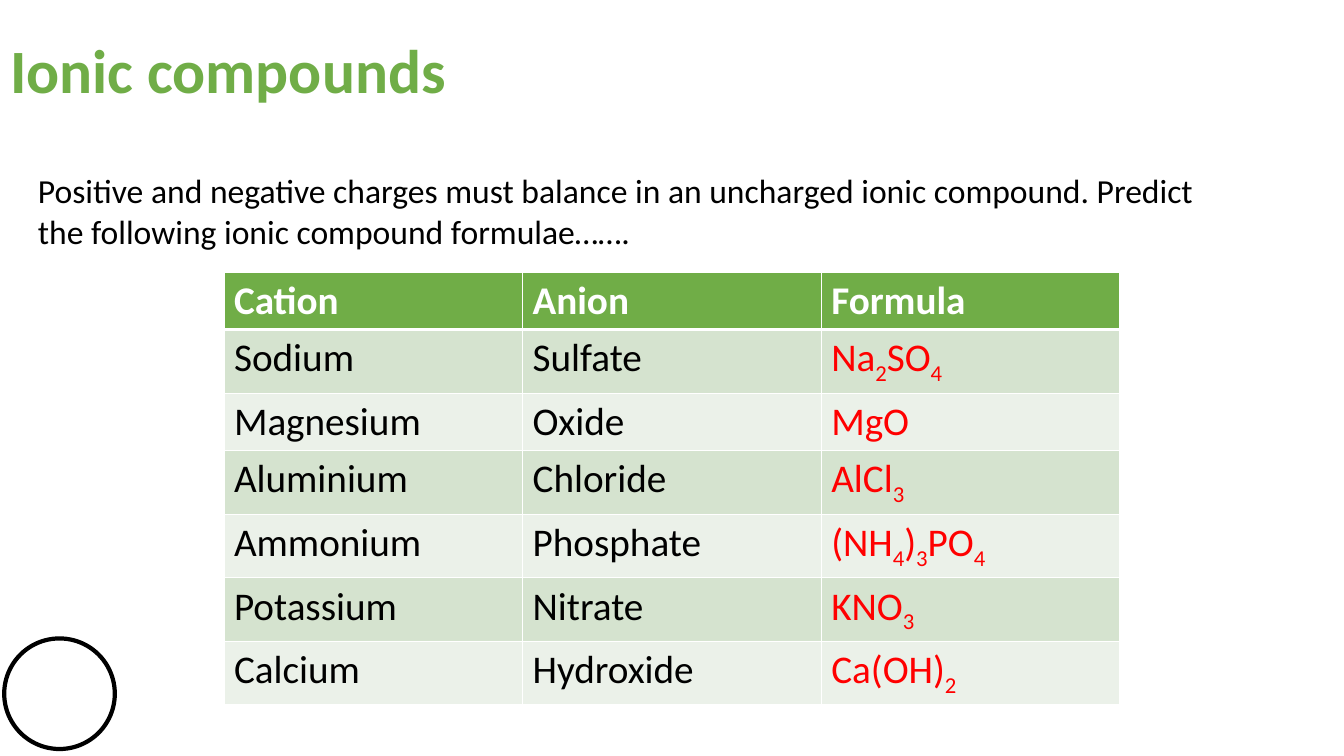
import itertools

import pptx
import pptx.dml.color
import pptx.enum.shapes
import pptx.enum.text
import pptx.oxml
import pptx.oxml.ns
import pptx.util

Pt = pptx.util.Pt
RGBColor = pptx.dml.color.RGBColor

GREEN = RGBColor(0x70, 0xAD, 0x47)
BAND_DARK = RGBColor(0xD5, 0xE3, 0xCF)
BAND_LIGHT = RGBColor(0xEB, 0xF1, 0xE9)
WHITE = RGBColor(0xFF, 0xFF, 0xFF)
BLACK = RGBColor(0x00, 0x00, 0x00)
RED = RGBColor(0xFF, 0x00, 0x00)

FONT = "Calibri"
HEADINGS = ("Cation", "Anion", "Formula")
COMPOUNDS = (
    ("Sodium", "Sulfate", "Na2SO4"),
    ("Magnesium", "Oxide", "MgO"),
    ("Aluminium", "Chloride", "AlCl3"),
    ("Ammonium", "Phosphate", "(NH4)3PO4"),
    ("Potassium", "Nitrate", "KNO3"),
    ("Calcium", "Hydroxide", "Ca(OH)2"),
)


def add_run(p, text, size, color, bold=False):
    r = p.add_run()
    r.text = text
    r.font.name = FONT
    r.font.size = Pt(size)
    r.font.bold = bold
    r.font.color.rgb = color
    return r


def add_formula(p, formula, size, color):
    for subscript, chars in itertools.groupby(formula, str.isdigit):
        r = add_run(p, "".join(chars), size, color)
        if subscript:
            r.font._element.set("baseline", "-25000")


def set_borders(cell, color, bottom_width):
    tc_pr = cell._tc.get_or_add_tcPr()
    widths = {"lnL": 1, "lnR": 1, "lnT": 1, "lnB": bottom_width}
    for tag, width in widths.items():
        tc_pr.append(pptx.oxml.parse_xml(
            f'<a:{tag} {pptx.oxml.ns.nsdecls("a")} w="{Pt(width)}">'
            f'<a:solidFill><a:srgbClr val="{color}"/></a:solidFill></a:{tag}>'
        ))


def add_badge(s, x, y, size):
    sp = s.shapes.add_shape(
        pptx.enum.shapes.MSO_SHAPE.OVAL, Pt(x), Pt(y), Pt(size), Pt(size))
    sp.shadow.inherit = False
    sp.fill.solid()
    sp.fill.fore_color.rgb = WHITE
    sp.line.color.rgb = BLACK
    sp.line.width = Pt(3)


def add_title(s, x, y, w, h):
    sp = s.shapes.title
    sp.left, sp.top, sp.width, sp.height = Pt(x), Pt(y), Pt(w), Pt(h)
    tf = sp.text_frame
    tf.vertical_anchor = pptx.enum.text.MSO_ANCHOR.MIDDLE
    p = tf.paragraphs[0]
    p.alignment = pptx.enum.text.PP_ALIGN.LEFT
    p.line_spacing = 0.9
    add_run(p, "Ionic compounds", 44, GREEN, True)


def add_instruction(s, x, y, w, h):
    tf = s.shapes.add_textbox(Pt(x), Pt(y), Pt(w), Pt(h)).text_frame
    tf.word_wrap = True
    tf.auto_size = pptx.enum.text.MSO_AUTO_SIZE.SHAPE_TO_FIT_TEXT
    add_run(
        tf.paragraphs[0],
        "Positive and negative charges must balance in an uncharged ionic "
        "compound. Predict the following ionic compound formulae…….",
        24, BLACK)


def add_compound_table(s, x, y, w, h):
    rows = (HEADINGS,) + COMPOUNDS
    frame = s.shapes.add_table(
        len(rows), len(HEADINGS), Pt(x), Pt(y), Pt(w), Pt(h))
    table = frame.table
    for row in table.rows:
        row.height = Pt(29.2)
    frame.height = Pt(h)
    for i, texts in enumerate(rows):
        header = i == 0
        fill = GREEN if header else BAND_DARK if i % 2 else BAND_LIGHT
        for j, text in enumerate(texts):
            cell = table.cell(i, j)
            set_borders(cell, WHITE, 3 if header else 1)
            cell.fill.solid()
            cell.fill.fore_color.rgb = fill
            p = cell.text_frame.paragraphs[0]
            if header:
                add_run(p, text, 28, WHITE, True)
            elif HEADINGS[j] == "Formula":
                add_formula(p, text, 28, RED)
            else:
                add_run(p, text, 28, BLACK)


def main():
    prs = pptx.Presentation()
    prs.slide_width, prs.slide_height = Pt(960), Pt(540)
    s = prs.slides.add_slide(prs.slide_layouts.get_by_name("Title Only"))
    add_badge(s, 3, 456, 79)
    add_title(s, 0, 0, 894, 104.4)
    add_instruction(s, 20, 118, 874, 65.4)
    add_compound_table(s, 160, 194.6, 640, 285.6)
    prs.save("out.pptx")


if __name__ == "__main__":
    main()
